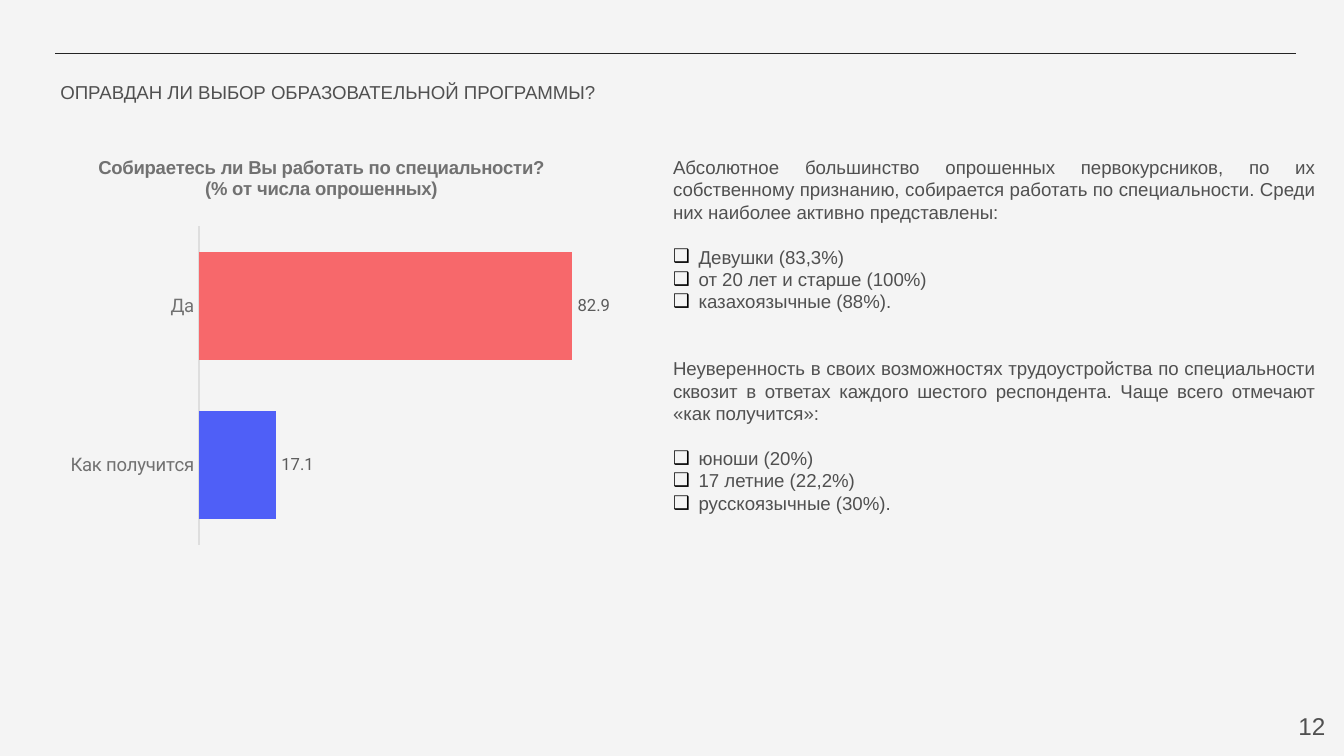
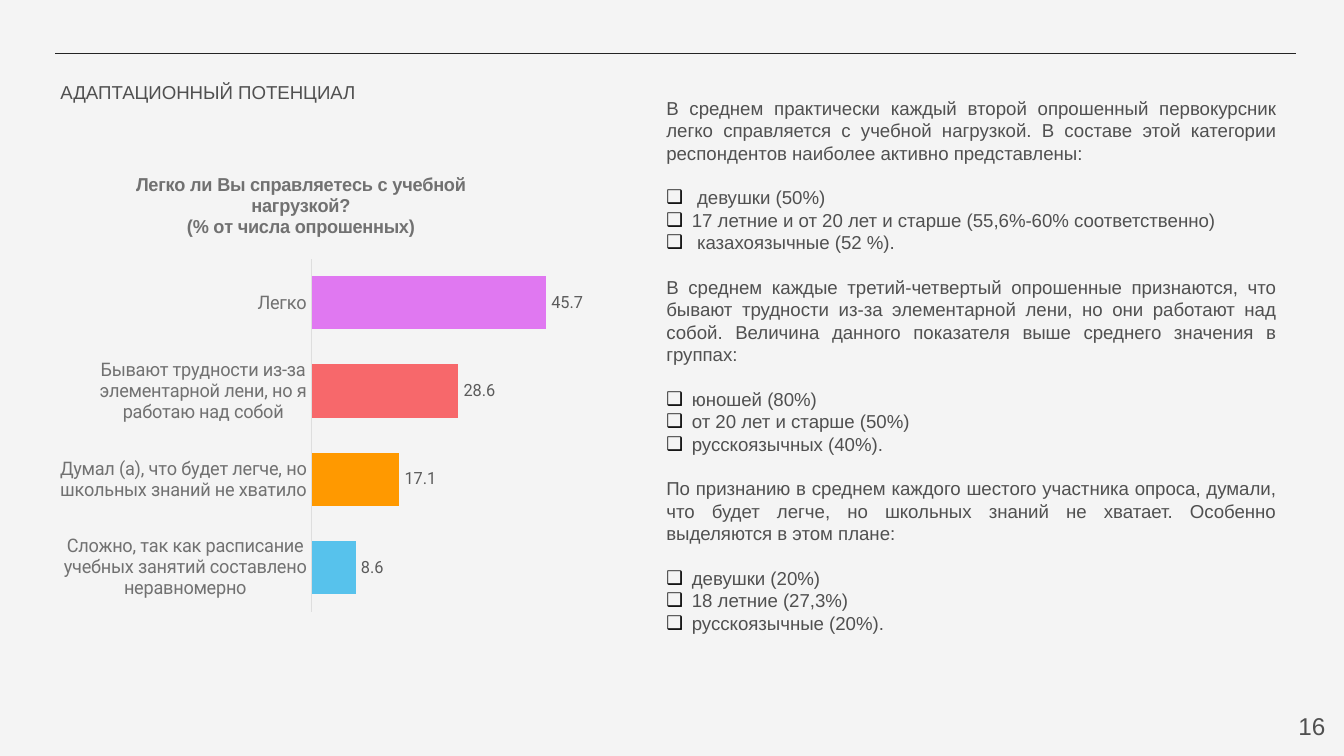
from dataclasses import dataclass

from lxml.etree import SubElement
from pptx import Presentation
from pptx.chart.data import CategoryChartData
from pptx.dml.color import RGBColor
from pptx.enum.chart import XL_CHART_TYPE, XL_LABEL_POSITION, XL_TICK_LABEL_POSITION, XL_TICK_MARK
from pptx.enum.shapes import MSO_CONNECTOR
from pptx.enum.text import PP_ALIGN
from pptx.oxml import parse_xml
from pptx.oxml.ns import nsdecls, qn
from pptx.util import Inches, Pt


@dataclass(frozen=True)
class Theme:
    """Colours, fonts and type sizes of the deck."""
    background: str = "F4F4F4"
    rule: str = "242424"
    text: str = "505050"
    bullet: str = "000000"
    chart_text: str = "717171"
    chart_label: str = "5B5B5B"
    axis: str = "DEDEDE"
    blue: str = "4F5FF7"
    red: str = "F7686B"
    sky: str = "57C2EC"
    orange: str = "FF9900"
    violet: str = "E078F1"
    font: str = "Arial"
    chart_font: str = "Roboto"
    body_size: int = 10
    label_size: int = 9
    number_size: int = 13
    line_height: int = 12


THEME = Theme()


@dataclass(frozen=True)
class Box:
    """Place and size in inches, or in shares of a chart."""
    left: float
    top: float
    width: float
    height: float

    def lengths(self) -> tuple:
        """Return the four lengths for python-pptx."""
        return tuple(Inches(n) for n in (self.left, self.top, self.width, self.height))


@dataclass(frozen=True)
class Section:
    """An introduction, its bulleted groups and the blank lines above."""
    intro: str
    groups: tuple[str, ...]
    lines_above: int = 1


@dataclass(frozen=True)
class Bar:
    """One bar of a survey chart."""
    answer: str
    percent: float
    color: str


@dataclass(frozen=True)
class Survey:
    """A bar chart of answers, listed from the bottom up."""
    box: Box
    question: str
    bars: tuple[Bar, ...]
    gap: int
    axis_end: int
    plot: Box
    title_place: tuple[float, float]


@dataclass(frozen=True)
class Page:
    """Content of one slide."""
    number: int
    title: str
    title_width: float
    survey: Survey
    body_box: Box
    sections: tuple[Section, ...]


PAGES = (
    Page(
        12,
        "ОПРАВДАН ЛИ ВЫБОР ОБРАЗОВАТЕЛЬНОЙ ПРОГРАММЫ?",
        4.53,
        Survey(
            Box(0.19, 1.13, 4.35, 3.7),
            "Собираетесь ли Вы работать по специальности? (% от числа опрошенных)",
            (Bar("Как получится", 17.1, THEME.blue), Bar("Да", 82.9, THEME.red)),
            48, 90, Box(0.3, 0.15, 0.7, 0.64), (0.12, 0),
        ),
        Box(4.91, 1.06, 4.97, 3.45),
        (
            Section(
                "Абсолютное большинство опрошенных первокурсников, по их собственному признанию, "
                "собирается работать по специальности. Среди них наиболее активно представлены:",
                ("Девушки (83,3%)", "от 20 лет и старше (100%)", "казахоязычные (88%)."),
                0,
            ),
            Section(
                "Неуверенность в своих возможностях трудоустройства по специальности сквозит "
                "в ответах каждого шестого респондента. Чаще всего отмечают «как получится»:",
                ("юноши (20%)", "17 летние (22,2%)", "русскоязычные (30%)."),
                2,
            ),
        ),
    ),
    Page(
        16,
        "АДАПТАЦИОННЫЙ ПОТЕНЦИАЛ",
        4.2,
        Survey(
            Box(0.41, 1.18, 3.93, 3.55),
            "Легко ли Вы справляетесь с учебной нагрузкой?\n(% от числа опрошенных)",
            (
                Bar("Сложно, так как расписание учебных занятий составлено неравномерно",
                    8.6, THEME.sky),
                Bar("Думал (а), что будет легче, но школьных знаний не хватило",
                    17.1, THEME.orange),
                Bar("Бывают трудности из-за элементарной лени, но я работаю над собой",
                    28.6, THEME.red),
                Bar("Легко", 45.7, THEME.violet),
            ),
            66, 50, Box(0.5, 0.21, 0.5, 0.74), (0.15, 0.02),
        ),
        Box(4.86, 0.62, 4.73, 4.79),
        (
            Section(
                "В среднем практически каждый второй опрошенный первокурсник легко справляется "
                "с учебной нагрузкой. В составе этой категории респондентов наиболее активно "
                "представлены:",
                (" девушки (50%)", "17 летние и от 20 лет и старше (55,6%-60% соответственно)",
                 " казахоязычные (52 %)."),
                0,
            ),
            Section(
                "В среднем каждые третий-четвертый опрошенные признаются, что бывают трудности "
                "из-за элементарной лени, но они работают над собой. Величина данного показателя "
                "выше среднего значения в группах:",
                ("юношей (80%)", "от 20 лет и старше (50%)", "русскоязычных (40%)."),
            ),
            Section(
                "По признанию в среднем каждого шестого участника опроса, думали, что будет "
                "легче, но школьных знаний не хватает. Особенно выделяются в этом плане:",
                ("девушки (20%)", "18 летние (27,3%)", "русскоязычные (20%)."),
            ),
        ),
    ),
)


def rgb(color: str) -> RGBColor:
    """Turn a hex string into a colour."""
    return RGBColor.from_string(color)


def style_font(font, size: int, color: str = THEME.text, name: str = THEME.font) -> None:
    """Set size, colour and typeface of a font."""
    font.size, font.name = Pt(size), name
    font.color.rgb = rgb(color)


def add_text_frame(slide, box: Box):
    """Add a wrapping text box with even insets and return its frame."""
    frame = slide.shapes.add_textbox(*box.lengths()).text_frame
    frame.word_wrap = True
    frame.margin_left = frame.margin_right = Inches(0.1)
    frame.margin_top = frame.margin_bottom = Inches(0.1)
    return frame


def add_bullet(para) -> None:
    """Give a paragraph a hanging square bullet."""
    properties = para._p.get_or_add_pPr()
    indent = Inches(0.19)
    properties.set("marL", str(indent))
    properties.set("indent", str(-indent))
    color = SubElement(properties, qn("a:buClr"))
    SubElement(color, qn("a:srgbClr")).set("val", THEME.bullet)
    SubElement(properties, qn("a:buFont")).set("typeface", THEME.font)
    SubElement(properties, qn("a:buChar")).set("char", "❑")


def add_frame(slide, page: Page) -> None:
    """Draw the background, rule, title and slide number."""
    fill = slide.background.fill
    fill.solid()
    fill.fore_color.rgb = rgb(THEME.background)
    rule = slide.shapes.add_connector(
        MSO_CONNECTOR.STRAIGHT, Inches(0.41), Inches(0.4), Inches(9.64), Inches(0.4))
    rule.line.color.rgb = rgb(THEME.rule)
    rule.line.width = Pt(0.75)
    SubElement(rule._element.spPr, qn("a:effectLst"))

    title = add_text_frame(slide, Box(0.31, 0.52, page.title_width, 0.37))
    title.margin_left = Inches(0.14)
    title.text = page.title
    style_font(title.paragraphs[0].font, THEME.body_size)

    number = add_text_frame(slide, Box(9.36, 5.19, 0.6, 0.43))
    number.text = str(page.number)
    number.paragraphs[0].alignment = PP_ALIGN.RIGHT
    style_font(number.paragraphs[0].font, THEME.number_size)


def add_body(slide, page: Page) -> None:
    """Write the sections with their bulleted groups."""
    frame = add_text_frame(slide, page.body_box)
    lines = [
        (text, index > 0, section.lines_above if index == 0 else int(index == 1))
        for section in page.sections
        for index, text in enumerate((section.intro, *section.groups))
    ]
    for position, (text, bulleted, lines_above) in enumerate(lines):
        para = frame.add_paragraph() if position else frame.paragraphs[0]
        para.text = text
        para.alignment = PP_ALIGN.JUSTIFY
        if bulleted:
            add_bullet(para)
        para.line_spacing = Pt(THEME.line_height)
        para.space_before = Pt(THEME.line_height * lines_above)
        style_font(para.font, THEME.body_size)


def place_layout(parent, values: dict[str, float], inner: bool = False) -> None:
    """Set a manual layout on a chart title or plot area."""
    target = '<c:layoutTarget val="inner"/>' if inner else ""
    modes = "".join(f'<c:{axis}Mode val="edge"/>' for axis in "xy")
    sizes = "".join(f'<c:{name} val="{value}"/>' for name, value in values.items())
    layout = parse_xml(f'<c:layout {nsdecls("c")}><c:manualLayout>{target}{modes}{sizes}'
                       "</c:manualLayout></c:layout>")
    for old in parent.findall(qn("c:layout")):
        parent.remove(old)
    text = parent.find(qn("c:tx"))
    parent.insert(0 if text is None else parent.index(text) + 1, layout)


def add_survey(slide, survey: Survey) -> None:
    """Draw the bar chart of a survey question."""
    data = CategoryChartData()
    data.categories = [bar.answer for bar in survey.bars]
    data.add_series("Series 1", [bar.percent for bar in survey.bars])
    chart = slide.shapes.add_chart(
        XL_CHART_TYPE.BAR_CLUSTERED, *survey.box.lengths(), data).chart
    chart.has_legend = False
    style_font(chart.font, THEME.body_size, THEME.rule)

    title = chart.chart_title
    title.text_frame.text = survey.question
    title.include_in_layout = False
    for para in title.text_frame.paragraphs:
        style_font(para.font, THEME.body_size, THEME.chart_text)
        para.font.bold = True
    place_layout(title._element, dict(zip("xy", survey.title_place)))
    plot_box = survey.plot
    place_layout(
        chart._chartSpace.chart.plotArea,
        {"x": plot_box.left, "y": plot_box.top, "w": plot_box.width, "h": plot_box.height},
        inner=True)

    values = chart.value_axis
    values.minimum_scale, values.maximum_scale = 0, survey.axis_end
    values.has_major_gridlines = False
    values.visible = False
    answers = chart.category_axis
    answers.major_tick_mark = answers.minor_tick_mark = XL_TICK_MARK.NONE
    answers.tick_label_position = XL_TICK_LABEL_POSITION.NEXT_TO_AXIS
    answers.format.line.color.rgb = rgb(THEME.axis)
    answers.format.line.width = Pt(0.75)
    style_font(answers.tick_labels.font, THEME.body_size, THEME.chart_text, THEME.chart_font)

    plot = chart.plots[0]
    plot.gap_width = survey.gap
    plot.vary_by_categories = False
    plot.has_data_labels = True
    labels = plot.data_labels
    labels.show_value = True
    labels.position = XL_LABEL_POSITION.OUTSIDE_END
    style_font(labels.font, THEME.label_size, THEME.chart_label, THEME.chart_font)
    for index, bar in enumerate(survey.bars):
        fill = plot.series[0].points[index].format.fill
        fill.solid()
        fill.fore_color.rgb = rgb(bar.color)


def main() -> None:
    """Build and save the deck."""
    deck = Presentation()
    deck.slide_width = Inches(10)
    deck.slide_height = deck.slide_width * 9 // 16
    for page in PAGES:
        slide = deck.slides.add_slide(deck.slide_layouts[6])
        add_frame(slide, page)
        add_body(slide, page)
        add_survey(slide, page.survey)
    deck.save("out.pptx")


if __name__ == "__main__":
    main()
